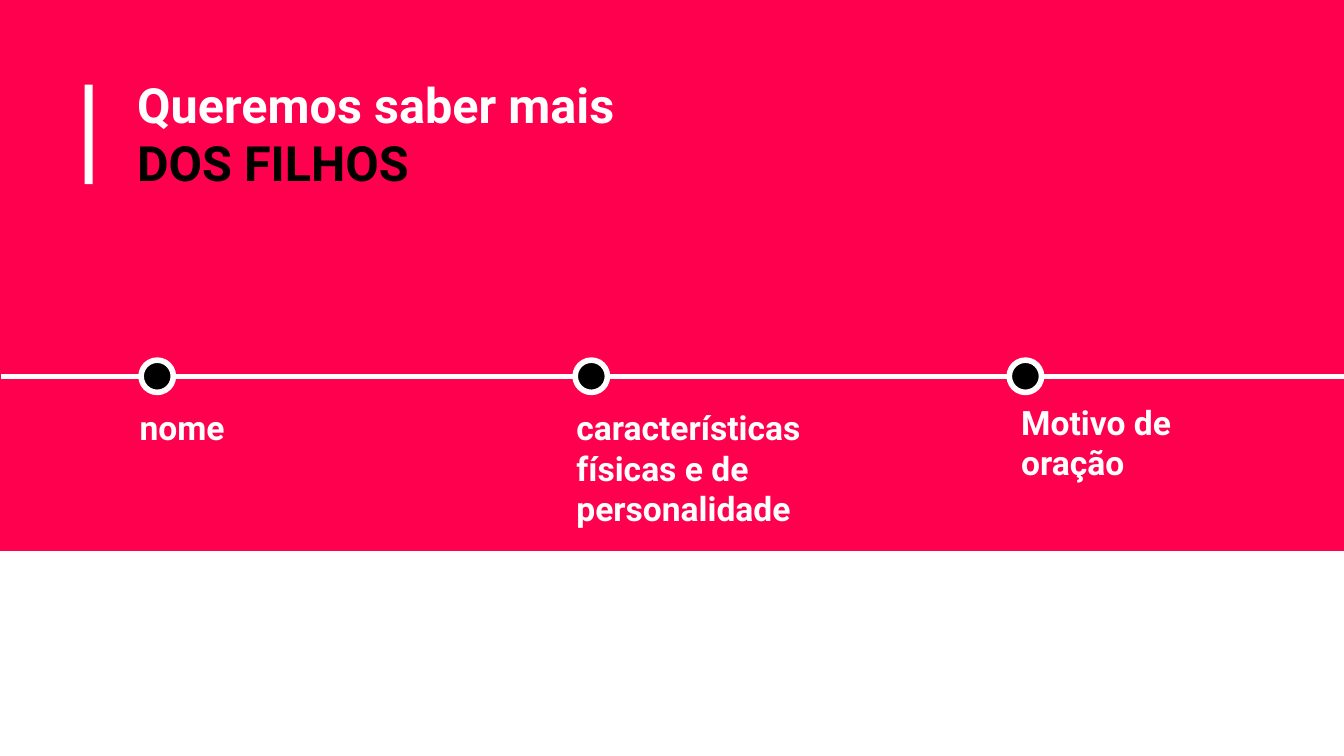
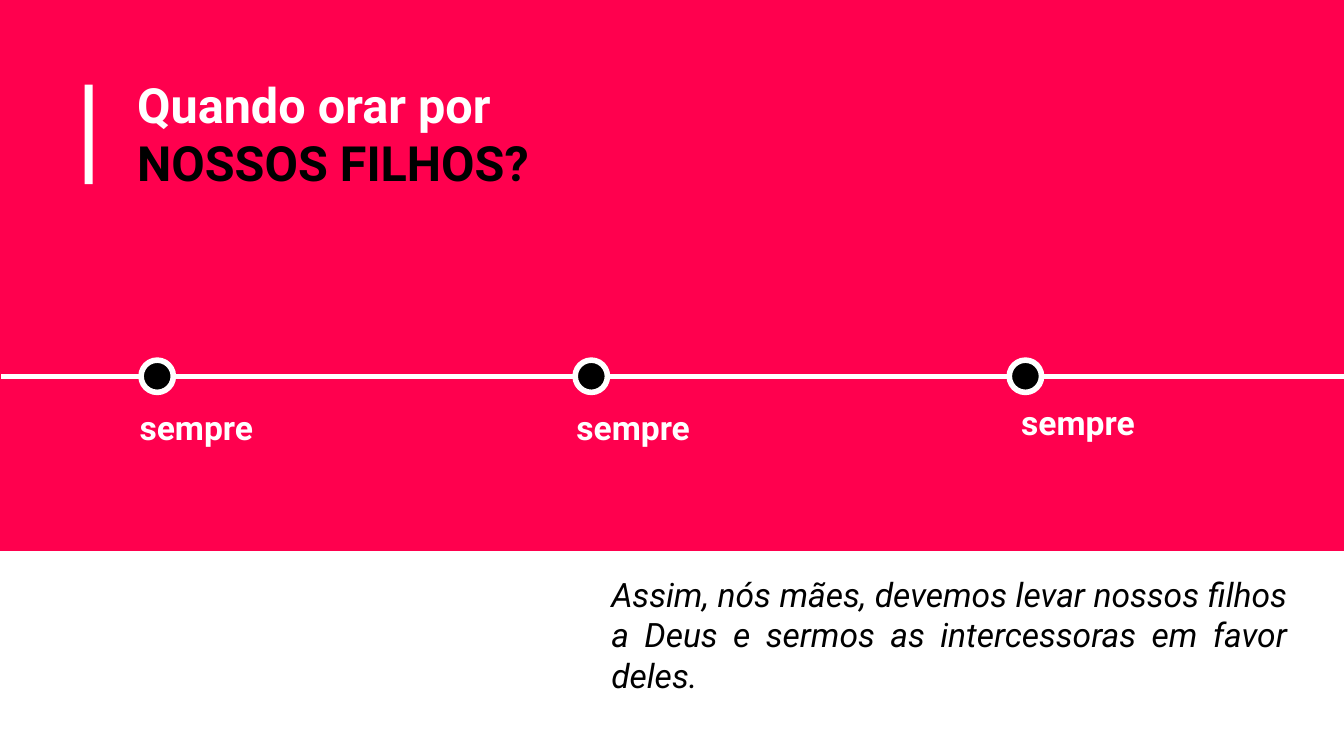
from lxml import etree
from pptx import Presentation, util as u
from pptx.dml.color import RGBColor
from pptx.enum import shapes, text
from pptx.oxml import ns

COLORS = {"band": "FF004E", "light": "FFFFFF", "dark": "000000"}
FONT = "Roboto"
WIDTH = 10
HEIGHT = WIDTH * 9 / 16
TIMELINE_Y = 2.8
FIRST_DOT, DOT_STEP, DOT_SIZE = 1.05, 3.23, 0.24
LABEL_BOXES = [(0.94, 2.93, 1.29), (4.19, 2.93, 1.98), (7.5, 2.89, 1.98)]

SLIDES = [
    {
        "title": ["Queremos saber mais", "DOS FILHOS"],
        "labels": ["nome", "características físicas e de personalidade", "Motivo de oração"],
        "note": None,
    },
    {
        "title": ["Quando orar por", "NOSSOS FILHOS?"],
        "labels": ["sempre"] * 3,
        "note": "Assim, nós mães, devemos levar nossos filhos a Deus e sermos "
                "as intercessoras em favor deles.",
    },
]


def add_filled(slide, kind, box, color):
    shape = slide.shapes.add_shape(kind, *map(u.Inches, box))
    shape.shadow.inherit = False
    shape.fill.solid()
    shape.fill.fore_color.rgb = RGBColor.from_string(COLORS[color])
    shape.line.fill.background()
    return shape


def write(shape, lines, size, colors, bold=False, italic=False,
          align=text.PP_ALIGN.LEFT, inset=0.1):
    frame = shape.text_frame
    frame.word_wrap = True
    frame.auto_size = text.MSO_AUTO_SIZE.NONE
    frame.vertical_anchor = text.MSO_ANCHOR.TOP
    frame.margin_left = frame.margin_right = u.Inches(0.1)
    frame.margin_top = frame.margin_bottom = u.Inches(inset)
    frame.text = "\n".join(lines)
    for paragraph, color in zip(frame.paragraphs, colors):
        paragraph.alignment = align
        paragraph.line_spacing = 1.0
        paragraph.space_before = u.Pt(0)
        paragraph.font.name = FONT
        paragraph.font.size = u.Pt(size)
        paragraph.font.bold = bold
        paragraph.font.italic = italic
        paragraph.font.color.rgb = RGBColor.from_string(COLORS[color])


presentation = Presentation()
presentation.slide_width = u.Inches(WIDTH)
presentation.slide_height = u.Inches(HEIGHT)
title_only = presentation.slide_layouts[5]

for content in SLIDES:
    slide = presentation.slides.add_slide(title_only)
    rectangle = shapes.MSO_SHAPE.RECTANGLE
    add_filled(slide, rectangle, (0, 0, WIDTH, 4.1), "band")
    add_filled(slide, rectangle, (0.63, 0.63, 0.06, 0.74), "light")

    title = slide.shapes.title
    title.left, title.top, title.width, title.height = map(u.Inches, (0.92, 0.46, 3.92, 0.94))
    write(title, content["title"], 26, ["light", "dark"], bold=True)
    slide.shapes.element.append(title.element)

    timeline = slide.shapes.add_connector(
        shapes.MSO_CONNECTOR.STRAIGHT,
        *map(u.Inches, (0.01, TIMELINE_Y, WIDTH, TIMELINE_Y)))
    timeline.line.color.rgb = RGBColor.from_string(COLORS["light"])
    timeline.line.width = u.Pt(3)
    etree.SubElement(timeline.element.spPr, ns.qn("a:effectLst"))

    for column in range(len(LABEL_BOXES)):
        dot = add_filled(slide, shapes.MSO_SHAPE.OVAL,
                         (FIRST_DOT + column * DOT_STEP, TIMELINE_Y - DOT_SIZE / 2,
                          DOT_SIZE, DOT_SIZE), "dark")
        dot.line.color.rgb = RGBColor.from_string(COLORS["light"])
        dot.line.width = u.Pt(3)

    for label, (left, top, width) in zip(content["labels"], LABEL_BOXES):
        label_box = slide.shapes.add_textbox(*map(u.Inches, (left, top, width, 0.45)))
        write(label_box, [label], 18, ["light"], bold=True)

    if content["note"]:
        note_box = slide.shapes.add_textbox(*map(u.Inches, (4.45, 4.22, 5.23, 0.71)))
        write(note_box, [content["note"]], 18, ["dark"], italic=True,
              align=text.PP_ALIGN.JUSTIFY, inset=0.05)
        note_box.text_frame.auto_size = text.MSO_AUTO_SIZE.SHAPE_TO_FIT_TEXT

presentation.save("out.pptx")
